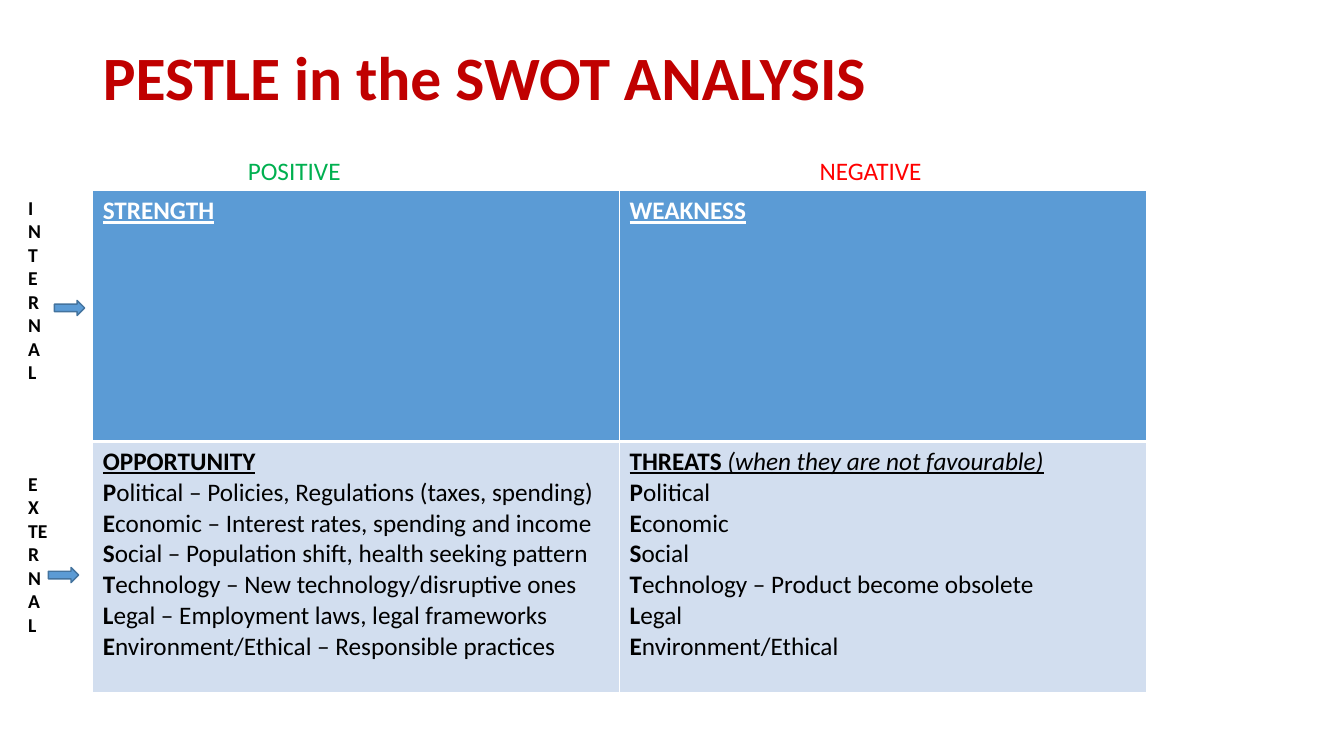
from lxml import etree
from pptx import Presentation
from pptx.dml.color import RGBColor
from pptx.enum.shapes import MSO_SHAPE
from pptx.enum.text import MSO_ANCHOR, MSO_AUTO_SIZE, PP_ALIGN
from pptx.oxml.ns import qn
from pptx.util import Inches, Pt

RIGHT_ARROW = MSO_SHAPE.RIGHT_ARROW
MIDDLE = MSO_ANCHOR.MIDDLE
GROW = MSO_AUTO_SIZE.SHAPE_TO_FIT_TEXT
LEFT = PP_ALIGN.LEFT
TITLE_ONLY = 5

FONT = "Calibri"
BLUE, PALE_BLUE, DARK_BLUE = "5B9BD5", "D2DEEF", "43739E"
WHITE, BLACK = "FFFFFF", "000000"

OPPORTUNITIES = [
    "Political – Policies, Regulations (taxes, spending)",
    "Economic – Interest rates, spending and income",
    "Social – Population shift, health seeking pattern",
    "Technology – New technology/disruptive ones",
    "Legal – Employment laws, legal frameworks",
    "Environment/Ethical – Responsible practices",
]
THREATS = ["Political", "Economic", "Social",
           "Technology – Product become obsolete", "Legal", "Environment/Ethical"]
# Each cell: heading, italic remark after it, list of factors
SWOT = [
    [("STRENGTH", "", []), ("WEAKNESS", "", [])],
    [("OPPORTUNITY", "", OPPORTUNITIES),
     ("THREATS ", "(when they are not favourable)", THREATS)],
]


def rgb(color):
    return RGBColor.from_string(color)


def add_run(p, text, size, color, bold=False, italic=False, underline=False):
    r = p.add_run()
    r.text = text
    f = r.font
    f.name, f.size = FONT, Pt(size)
    f.bold, f.italic, f.underline = bold, italic, underline
    f.color.rgb = rgb(color)


def add_title(s, text, x, y, w, h):
    sp = s.shapes.title
    sp.left, sp.top, sp.width, sp.height = (Inches(v) for v in (x, y, w, h))
    tf = sp.text_frame
    tf.vertical_anchor = MIDDLE
    p = tf.paragraphs[0]
    p.alignment, p.line_spacing = LEFT, 0.9
    add_run(p, text, 44, "C00000", bold=True)


def add_label(s, text, x, y, w, h, size, color, bold=False, wrap=False):
    sp = s.shapes.add_textbox(Inches(x), Inches(y), Inches(w), Inches(h))
    tf = sp.text_frame
    tf.word_wrap, tf.auto_size = wrap, GROW
    add_run(tf.paragraphs[0], text, size, color, bold)
    return sp


def add_arrow(s, x, y, w=0.3, h=0.15):
    sp = s.shapes.add_shape(RIGHT_ARROW, Inches(x), Inches(y), Inches(w), Inches(h))
    sp.shadow.inherit = False
    sp.fill.solid()
    sp.fill.fore_color.rgb = rgb(BLUE)
    sp.line.color.rgb = rgb(DARK_BLUE)
    sp.line.width = Pt(1)


def set_borders(cell, bottom):
    """White borders of 1 pt, with the given width in points at the bottom."""
    tc_pr = cell._tc.get_or_add_tcPr()
    for i, (side, width) in enumerate([("L", 1), ("R", 1), ("T", 1), ("B", bottom)]):
        ln = etree.Element(qn(f"a:ln{side}"), w=str(Pt(width)))
        fill = etree.SubElement(ln, qn("a:solidFill"))
        etree.SubElement(fill, qn("a:srgbClr"), val=WHITE)
        tc_pr.insert(i, ln)


def fill_cell(cell, content, fill, color, bottom):
    heading, remark, factors = content
    cell.fill.solid()
    cell.fill.fore_color.rgb = rgb(fill)
    set_borders(cell, bottom)
    tf = cell.text_frame
    p = tf.paragraphs[0]
    add_run(p, heading, 18, color, bold=True, underline=True)
    if remark:
        add_run(p, remark, 18, color, italic=True, underline=True)
    for factor in factors:
        p = tf.add_paragraph()
        add_run(p, factor[0], 18, color, bold=True)
        add_run(p, factor[1:], 18, color)


def add_swot_table(s, x, y, w, h):
    table = s.shapes.add_table(2, 2, Inches(x), Inches(y), Inches(w), Inches(h)).table
    for col in table.columns:
        col.width = Inches(w / 2)
    styles = [(BLUE, WHITE, 3), (PALE_BLUE, BLACK, 1)]
    for i, (row, style) in enumerate(zip(SWOT, styles)):
        table.rows[i].height = Inches(h / 2)
        for j, content in enumerate(row):
            fill_cell(table.cell(i, j), content, *style)


def add_row_labels(s, x, y, row_h):
    """Upright words with arrows beside the two table rows."""
    add_label(s, "EXTERNAL", x, y + row_h + 0.25, 0.39, 1.99, 14, BLACK, True, True)
    internal = add_label(s, "INTERNAL", x, y, 0.48, row_h, 14, BLACK, True, True)
    internal.text_frame._txBody.bodyPr.set("vert", "wordArtVert")
    add_arrow(s, x + 0.36, y + 1.09)
    add_arrow(s, x + 0.3, y + row_h + 1.25)


def add_column_labels(s, x, y):
    add_label(s, "POSITIVE", x + 1.44, y, 1.13, 0.4, 18, "00B050")
    add_label(s, "NEGATIVE", x + 7.11, y, 1.22, 0.4, 18, "FF0000")


def main():
    prs = Presentation()
    prs.slide_width, prs.slide_height = Inches(13.33), Inches(7.5)
    s = prs.slides.add_slide(prs.slide_layouts[TITLE_ONLY])
    x, y, w, h = 0.92, 1.89, 10.45, 4.98
    add_title(s, "PESTLE in the SWOT ANALYSIS", x, 0.4, 11.5, 0.8)
    add_swot_table(s, x, y, w, h)
    add_row_labels(s, 0.18, y, h / 2)
    add_column_labels(s, x, y - 0.4)
    prs.save("out.pptx")


if __name__ == "__main__":
    main()
